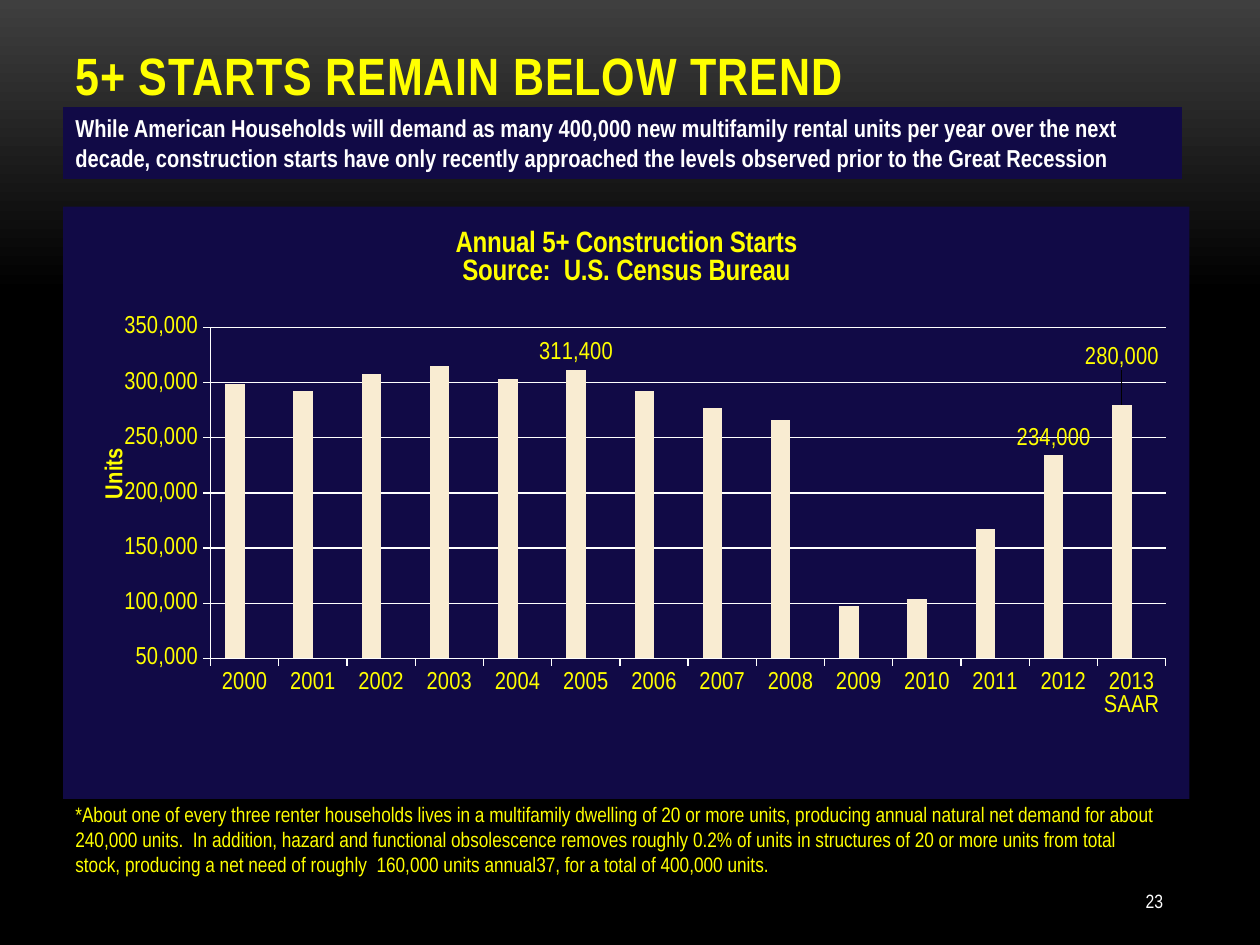
"""Build a slide on yearly starts of homes with five or more units."""
from dataclasses import dataclass
from typing import Optional

from lxml.etree import SubElement
from pptx import Presentation
from pptx.chart.data import CategoryChartData
from pptx.dml.color import RGBColor
from pptx.enum.chart import XL_CHART_TYPE, XL_LABEL_POSITION, XL_TICK_MARK
from pptx.enum.shapes import MSO_SHAPE
from pptx.enum.text import MSO_ANCHOR, PP_ALIGN
from pptx.oxml import parse_xml
from pptx.oxml.ns import nsdecls, qn
from pptx.util import Pt

FACE = "Arial Narrow"
HUES = {
    "text": "FFFF00", "white": "FFFFFF", "panel": "110A46", "bar": "F9ECD2",
    "spare": "CC8E60", "top": "3F3F3F", "base": "000000",
}
STARTS = [299100, 292800, 307900, 315200, 303000, 311400, 292800,
          277300, 266000, 97300, 104000, 167000, 234000, 280000]
YEARS = [str(year) for year in range(2000, 2013)] + ["2013 SAAR"]
MARKED = (5, 12, 13)


@dataclass
class Block:
    text: str
    left: float
    top: float
    width: float
    height: float
    size: float
    hue: str = "text"
    bold: bool = False
    fill: Optional[str] = None
    anchor: MSO_ANCHOR = MSO_ANCHOR.TOP
    align: PP_ALIGN = PP_ALIGN.LEFT
    gap: int = 0


BLOCKS = [
    Block("5+ STARTS REMAIN BELOW TREND", 36, 19.44, 665.28, 44.64, 30,
          bold=True, anchor=MSO_ANCHOR.BOTTOM, gap=50),
    Block("23", 594, 500.4, 77.76, 28.8, 11, "white",
          anchor=MSO_ANCHOR.MIDDLE, align=PP_ALIGN.RIGHT),
    Block("While American Households will demand as many 400,000 new multifamily "
          "rental units per year over the next decade, construction starts have only "
          "recently approached the levels observed prior to the Great Recession",
          36, 61.2, 639.36, 41.04, 14, "white", bold=True, fill="panel"),
    Block("*About one of every three renter households lives in a multifamily dwelling "
          "of 20 or more units, producing annual natural net demand for about 240,000 "
          "units.  In addition, hazard and functional obsolescence removes roughly 0.2% "
          "of units in structures of 20 or more units from total stock, producing a net "
          "need of roughly  160,000 units annual37, for a total of 400,000 units.",
          36, 454.32, 636.48, 51.12, 12),
]


def tint(name: str) -> RGBColor:
    return RGBColor.from_string(HUES[name])


def style(font, size: float, hue: str = "text", bold: bool = False) -> None:
    font.name, font.size, font.bold = FACE, Pt(size), bold
    font.color.rgb = tint(hue)


def paint(slide) -> None:
    fill = slide.background.fill
    fill.gradient()
    fill.gradient_angle = 270
    for stop, name, place in zip(fill.gradient_stops, ("top", "base"), (0, 0.31)):
        stop.color.rgb = tint(name)
        stop.position = place


def draw(slide, block: Block) -> None:
    area = [Pt(n) for n in (block.left, block.top, block.width, block.height)]
    if block.fill:
        shape = slide.shapes.add_shape(MSO_SHAPE.RECTANGLE, *area)
        shape.shadow.inherit = False
        shape.fill.solid()
        shape.fill.fore_color.rgb = tint(block.fill)
        shape.line.fill.background()
    else:
        shape = slide.shapes.add_textbox(*area)
    frame = shape.text_frame
    frame.word_wrap = True
    frame.vertical_anchor = block.anchor
    para = frame.paragraphs[0]
    para.text, para.alignment = block.text, block.align
    style(para.font, block.size, block.hue, block.bold)
    if block.gap:
        para.runs[0].font._element.set("spc", str(block.gap))


def place(parent, after: Optional[str], **parts) -> None:
    for old in parent.findall(qn("c:layout")):
        parent.remove(old)
    layout = parse_xml(f"<c:layout {nsdecls('c')}><c:manualLayout/></c:layout>")
    for tag, value in parts.items():
        SubElement(layout[0], qn(f"c:{tag}")).set("val", str(value))
    if after:
        parent.find(qn(after)).addnext(layout)
    else:
        parent.insert(0, layout)


def write(title, text: str, size: float):
    title.text_frame.text = text
    for para in title.text_frame.paragraphs:
        style(para.font, size, bold=True)
    return title._element


def rule(line) -> None:
    line.color.rgb = tint("white")
    line.width = Pt(0.75)


def plot(slide) -> None:
    data = CategoryChartData(number_format="#,##0")
    data.categories = YEARS
    data.add_series("Series 1", STARTS)
    data.add_series("Series 2", [None] * len(YEARS))
    chart = slide.shapes.add_chart(XL_CHART_TYPE.COLUMN_CLUSTERED, Pt(36), Pt(118.08),
                                   Pt(643.68), Pt(338.4), data).chart
    root = chart.element
    style(chart.font, 14)
    root.find(qn("c:txPr")).addprevious(parse_xml(
        f'<c:spPr {nsdecls("c", "a")}><a:solidFill><a:srgbClr val="{HUES["panel"]}"/>'
        "</a:solidFill><a:ln><a:noFill/></a:ln></c:spPr>"))
    chart.has_legend = False
    chart.has_title = True
    head = write(chart.chart_title,
                 "Annual 5+ Construction Starts\nSource:  U.S. Census Bureau", 16.8)
    head.find(qn("c:overlay")).set("val", "1")
    place(root.find(".//" + qn("c:plotArea")), None, layoutTarget="inner",
          xMode="edge", yMode="edge", x=0.131, y=0.204, w=0.848, h=0.559)

    units = chart.value_axis
    for axis in (chart.category_axis, units):
        axis.major_tick_mark = XL_TICK_MARK.OUTSIDE
        axis.minor_tick_mark = XL_TICK_MARK.NONE
        style(axis.tick_labels.font, 14)
        rule(axis.format.line)
    units.minimum_scale, units.maximum_scale, units.major_unit = 50000, 350000, 50000
    units.tick_labels.number_format = "#,##0"
    units.tick_labels.number_format_is_linked = False
    units.has_major_gridlines = True
    rule(units.major_gridlines.format.line)
    place(write(units.axis_title, "Units", 14), "c:tx",
          xMode="edge", yMode="edge", x=0.03, y=0.4)

    bars = chart.plots[0]
    bars.gap_width, bars.vary_by_categories = 150, False
    for series, name in zip(bars.series, ("bar", "spare")):
        series.format.fill.solid()
        series.format.fill.fore_color.rgb = tint(name)
    first = bars.series[0]
    first.data_labels.show_value = False
    for spot in MARKED:
        label = first.points[spot].data_label
        style(label.font, 14)
        label.position = XL_LABEL_POSITION.OUTSIDE_END
    last = root.xpath(f'.//c:dLbl[c:idx/@val="{MARKED[-1]}"]')[0]
    place(last, "c:idx", x=0, y=-0.05)


def main() -> None:
    deck = Presentation()
    deck.slide_width, deck.slide_height = Pt(720), Pt(540)
    slide = deck.slides.add_slide(deck.slide_layouts[6])
    paint(slide)
    plot(slide)
    for block in BLOCKS:
        draw(slide, block)
    deck.save("out.pptx")


if __name__ == "__main__":
    main()
